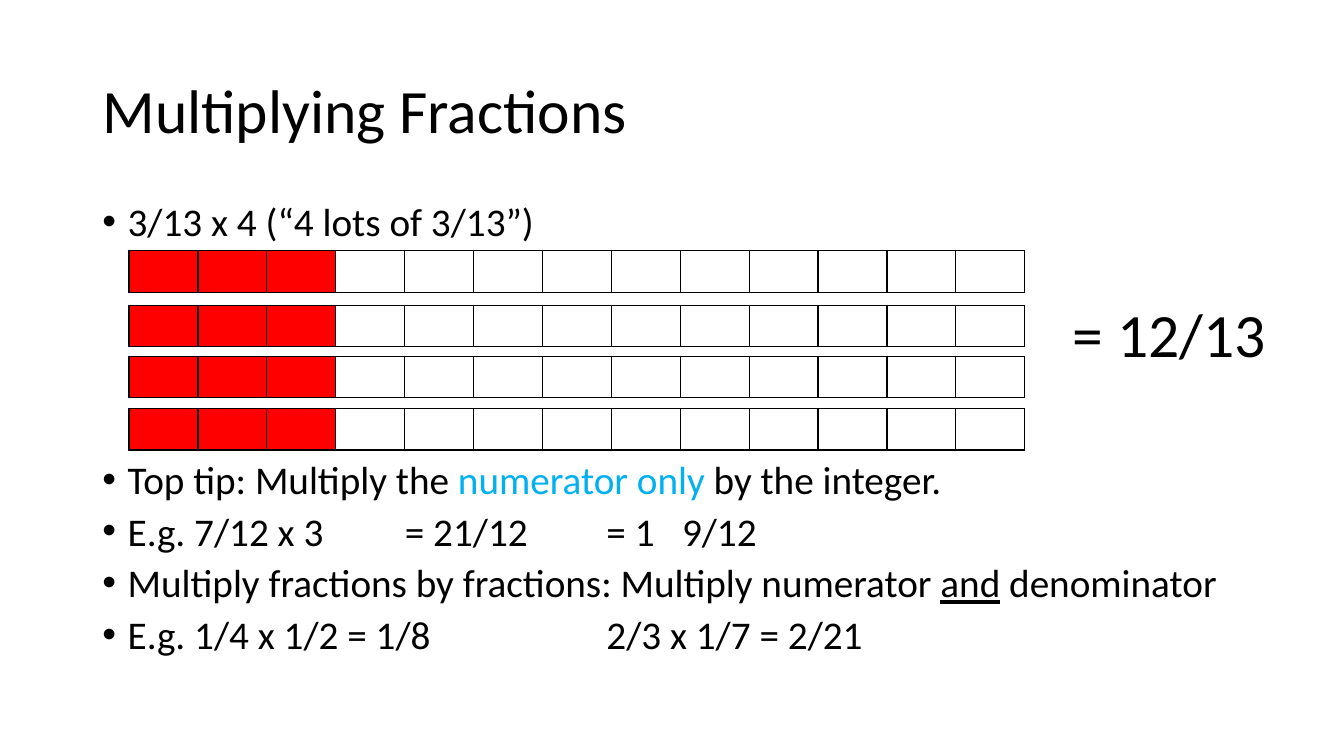
from dataclasses import dataclass

from lxml.etree import SubElement
from pptx import Presentation
from pptx.dml.color import RGBColor
from pptx.enum.text import MSO_ANCHOR, MSO_AUTO_SIZE, PP_ALIGN
from pptx.oxml.ns import qn
from pptx.util import Pt


@dataclass(frozen=True)
class Theme:
    font: str = "Calibri"
    title_size: int = 44
    body_size: int = 28
    ink: str = "000000"
    accent: str = "00B0F0"
    shaded: str = "FF0000"


THEME = Theme()

# Fraction bars: 3 of 13 parts shaded, four times
PARTS, SHADED_PARTS = 13, 3
BAR_LEFT, BAR_WIDTH, BAR_HEIGHT = 92.2, 640, 29.5
BAR_TOPS = (179.2, 218.2, 254.4, 292)

# Gap that leaves room for the bars, and tab stops for the worked examples
BARS_GAP = 157.5
TAB_STOPS = (216, 288, 360, 414)

# Each line is a list of (text, format) pieces
RULES = [
    [("3/13 x 4 (“4 lots of 3/13”)", {})],
    [("Top tip: Multiply the ", {}),
     ("numerator only", {"color": THEME.accent}),
     (" by the integer.", {})],
    [("E.g. 7/12 x 3\t= 21/12\t= 1\t9/12", {})],
    [("Multiply fractions by fractions: Multiply numerator ", {}),
     ("and", {"underline": True}),
     (" denominator", {})],
    [("E.g. 1/4 x 1/2 = 1/8\t\t2/3 x 1/7 = 2/21", {})],
]


def place(box, left, top, width, height):
    box.left, box.top = Pt(left), Pt(top)
    box.width, box.height = Pt(width), Pt(height)


def write(paragraph, text, size=THEME.body_size, color=THEME.ink, underline=None):
    run = paragraph.add_run()
    run.text = text
    run.font.name = THEME.font
    run.font.size = Pt(size)
    run.font.color.rgb = RGBColor.from_string(color)
    run.font.underline = underline


def add_bullet(paragraph):
    properties = paragraph._p.get_or_add_pPr()
    properties.set("marL", str(Pt(18)))
    properties.set("indent", str(Pt(-18)))
    SubElement(properties, qn("a:buFont"), typeface="Arial")
    SubElement(properties, qn("a:buChar"), char="•")
    stops = SubElement(properties, qn("a:tabLst"))
    for stop in TAB_STOPS:
        SubElement(stops, qn("a:tab"), pos=str(Pt(stop)), algn="l")


def add_title(slide, text):
    title = slide.shapes.title
    place(title, 66, 28.8, 828, 104.4)
    frame = title.text_frame
    frame.vertical_anchor = MSO_ANCHOR.MIDDLE
    frame.auto_size = MSO_AUTO_SIZE.NONE
    heading = frame.paragraphs[0]
    heading.alignment = PP_ALIGN.LEFT
    heading.line_spacing = 0.9
    write(heading, text, size=THEME.title_size)


def add_rules(slide, rules):
    body = slide.placeholders[1]
    place(body, 66, 143.8, 828, 342.6)
    frame = body.text_frame
    frame.auto_size = MSO_AUTO_SIZE.NONE
    for number, pieces in enumerate(rules):
        rule = frame.add_paragraph() if number else frame.paragraphs[0]
        rule.line_spacing = 0.8
        rule.space_before = Pt(BARS_GAP if number == 1 else 10)
        add_bullet(rule)
        for text, style in pieces:
            write(rule, text, **style)


def outline(cell):
    properties = cell._tc.get_or_add_tcPr()
    for position, side in enumerate(("a:lnL", "a:lnR", "a:lnT", "a:lnB")):
        border = properties.makeelement(qn(side), {"w": str(Pt(1))})
        fill = SubElement(border, qn("a:solidFill"))
        SubElement(fill, qn("a:srgbClr"), val=THEME.ink)
        properties.insert(position, border)


def add_fraction_bar(slide, top):
    bar = slide.shapes.add_table(1, PARTS, Pt(BAR_LEFT), Pt(top),
                                 Pt(BAR_WIDTH), Pt(BAR_HEIGHT)).table
    bar.first_row = bar.horz_banding = False
    for column in bar.columns:
        column.width = Pt(BAR_WIDTH / PARTS)
    for part, cell in enumerate(bar.iter_cells()):
        if part < SHADED_PARTS:
            cell.fill.solid()
            cell.fill.fore_color.rgb = RGBColor.from_string(THEME.shaded)
        else:
            cell.fill.background()
        outline(cell)


def add_result(slide, text):
    result = slide.shapes.add_textbox(Pt(758.2), Pt(208), Pt(154), Pt(60.5))
    frame = result.text_frame
    frame.word_wrap = True
    frame.auto_size = MSO_AUTO_SIZE.SHAPE_TO_FIT_TEXT
    frame.paragraphs[0].alignment = PP_ALIGN.CENTER
    write(frame.paragraphs[0], text, size=THEME.title_size)


def main():
    deck = Presentation()
    deck.slide_width, deck.slide_height = Pt(960), Pt(540)
    slide = deck.slides.add_slide(deck.slide_layouts[1])

    # Title and rules
    add_title(slide, "Multiplying Fractions")
    add_rules(slide, RULES)

    # Four lots of 3/13 and their product
    for top in BAR_TOPS:
        add_fraction_bar(slide, top)
    add_result(slide, "= 12/13")

    deck.save("out.pptx")


if __name__ == "__main__":
    main()
